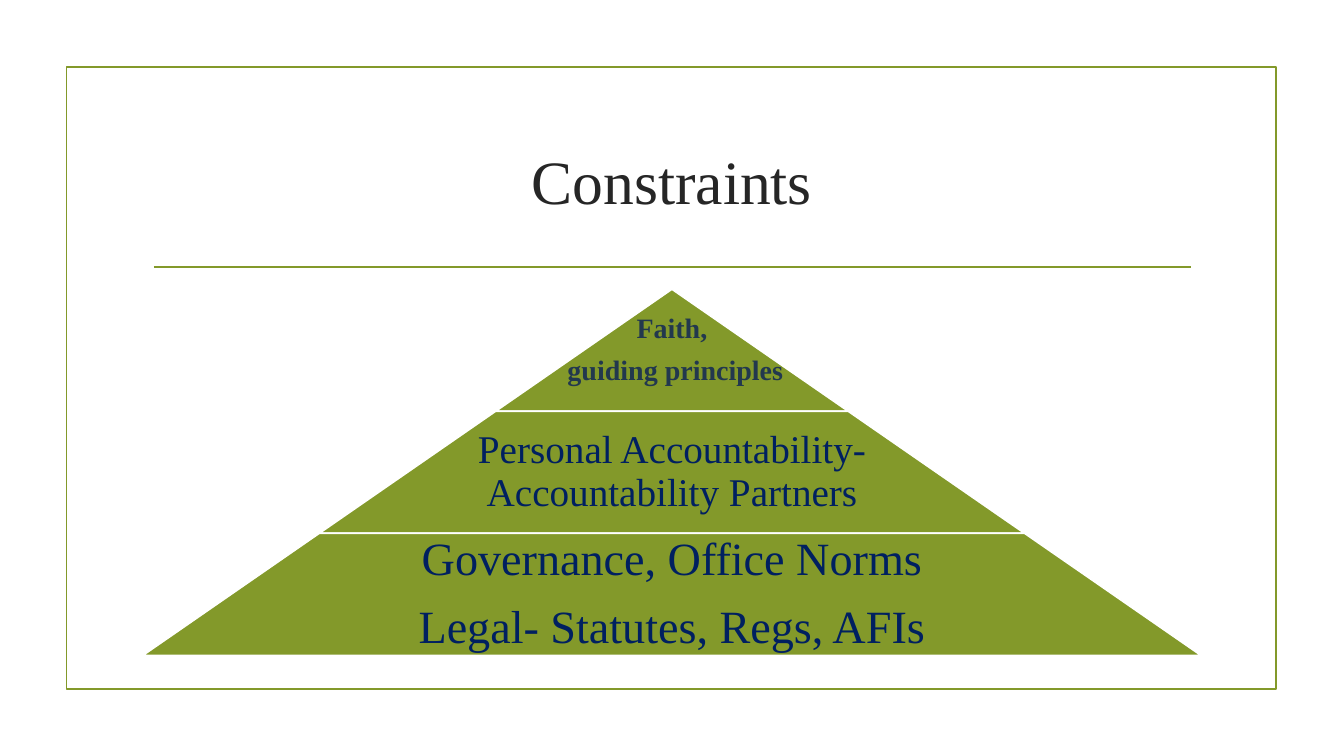
"""Build the Constraints slide: a three-level pyramid under a framed title."""
import dataclasses

import pptx
import pptx.dml.color
import pptx.enum.shapes
import pptx.enum.text
import pptx.oxml.ns
import pptx.util

Pt = pptx.util.Pt


@dataclasses.dataclass(frozen=True)
class Theme:
    font: str = "Times New Roman"
    green: str = "83992A"
    white: str = "FFFFFF"
    title: str = "262626"
    slate: str = "22384E"
    navy: str = "002060"
    title_size: int = 44
    level_sizes: tuple = (20, 28, 33)
    line_width: float = 1.25


theme = Theme()


def color(value):
    return pptx.dml.color.RGBColor.from_string(value)


def write(box, text, size, fill, bold=False, inset=0, spacing=0.9, after=0):
    frame = box.text_frame
    frame.word_wrap = True
    frame.auto_size = pptx.enum.text.MSO_AUTO_SIZE.NONE
    frame.vertical_anchor = pptx.enum.text.MSO_ANCHOR.MIDDLE
    frame.margin_left = frame.margin_right = Pt(inset)
    frame.margin_top = frame.margin_bottom = Pt(inset)
    frame.text = text
    for para in frame.paragraphs:
        para.alignment = pptx.enum.text.PP_ALIGN.CENTER
        para.line_spacing = spacing
        para.space_before = Pt(0)
        para.space_after = Pt(after)
        para.font.name = theme.font
        para.font.size = Pt(size)
        para.font.bold = bold
        para.font.color.rgb = color(fill)


deck = pptx.Presentation()
deck.slide_width, deck.slide_height = Pt(960), Pt(540)
page = deck.slides.add_slide(deck.slide_layouts[5])
page.background.fill.solid()
page.background.fill.fore_color.rgb = color(theme.white)

border = page.shapes.add_shape(
    pptx.enum.shapes.MSO_SHAPE.RECTANGLE, Pt(47.5), Pt(48), Pt(864), Pt(444))
border.shadow.inherit = False
border.fill.background()
border.line.color.rgb = color(theme.green)
border.line.width = Pt(theme.line_width)

rule = page.shapes.add_connector(
    pptx.enum.shapes.MSO_CONNECTOR.STRAIGHT, Pt(110), Pt(190.8), Pt(850.5), Pt(190.8))
rule.line.color.rgb = color(theme.green)
rule.line.width = Pt(theme.line_width)
rule._element.spPr.append(pptx.oxml.parse_xml(
    f"<a:effectLst {pptx.oxml.ns.nsdecls('a')}/>"))

title = page.shapes.title
title.left, title.top, title.width, title.height = Pt(102), Pt(77), Pt(756), Pt(103)
write(title, "Constraints", theme.title_size, theme.title, spacing=1)

center, pyramid_top, level_height, top_width = 480, 206.6, 87.2, 252
levels = [
    ("Faith,\n guiding principles", theme.slate, True, 252, 2),
    ("Personal Accountability-Accountability Partners", theme.navy, False, 328, 3),
    ("Governance, Office Norms\nLegal- Statutes, Regs, AFIs", theme.navy, False, 492, 3.5),
]
for index, (text, fill, bold, text_width, inset) in enumerate(levels):
    top = pyramid_top + index * level_height
    width = top_width * (index + 1)
    size = theme.level_sizes[index]
    level = page.shapes.add_shape(
        pptx.enum.shapes.MSO_SHAPE.TRAPEZOID,
        Pt(center - width / 2), Pt(top), Pt(width), Pt(level_height))
    level.adjustments[0] = top_width / 2 / level_height
    level.shadow.inherit = False
    level.fill.solid()
    level.fill.fore_color.rgb = color(theme.green)
    level.line.color.rgb = color(theme.white)
    level.line.width = Pt(theme.line_width)
    label = page.shapes.add_textbox(
        Pt(center - text_width / 2), Pt(top), Pt(text_width), Pt(level_height))
    write(label, text, size, fill, bold=bold, inset=inset, after=round(size * 0.4))

deck.save("out.pptx")
